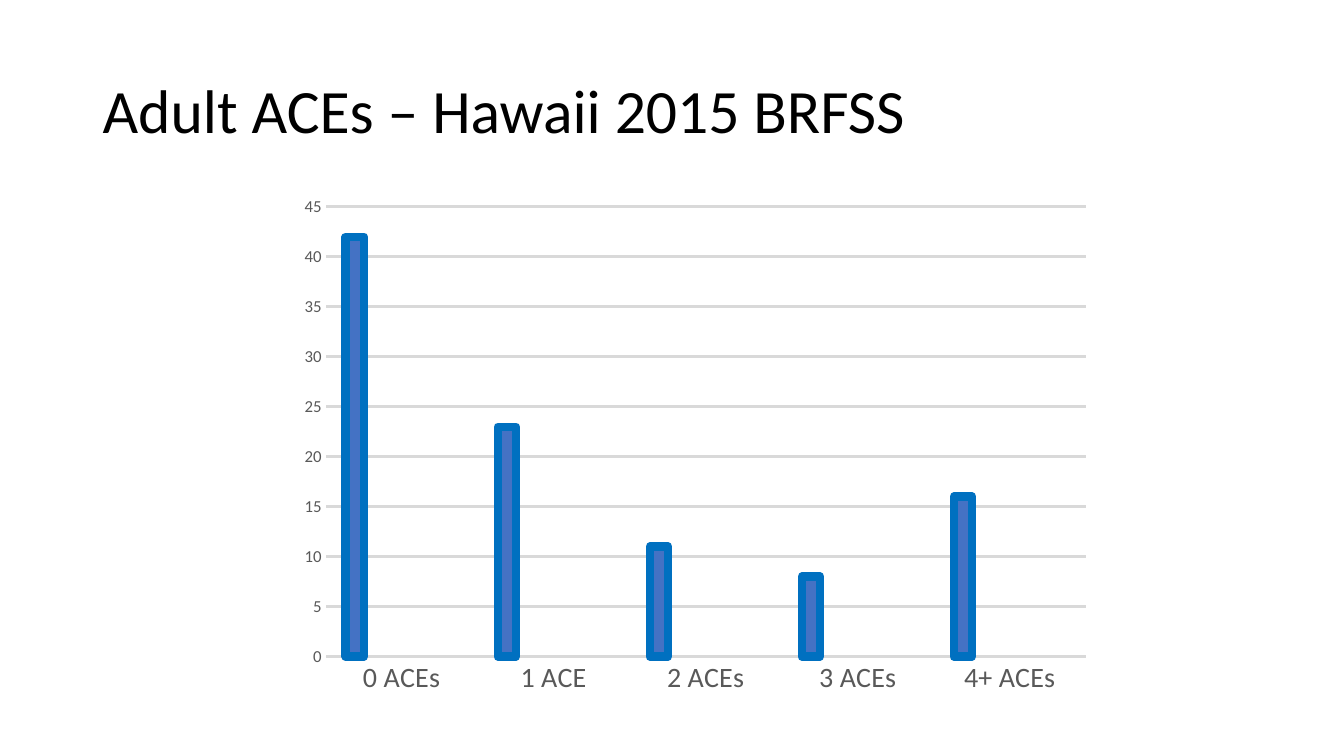
import pptx
import pptx.chart.data
import pptx.dml.color
import pptx.enum.chart
import pptx.enum.text
import pptx.util

WIDE, HIGH = 13.33, 7.5
BLACK, GREY, RULE, EDGE = "000000", "595959", "D9D9D9", "0070C0"
FILLS = ["4472C4", "ED7D31", "A5A5A5", "FFC000", "5B9BD5"]


def tint(code):
    return pptx.dml.color.RGBColor.from_string(code)


class Deck:
    """Holds the style and the current slide; places are shares of its size."""

    def __init__(self, face):
        self.face = face
        self.prs = pptx.Presentation()
        self.prs.slide_width = pptx.util.Inches(WIDE)
        self.prs.slide_height = pptx.util.Inches(HIGH)
        self.slide = self.prs.slides.add_slide(self.prs.slide_layouts[6])

    def place(self, left, top, width, height):
        return [pptx.util.Inches(share * side) for share, side in
                zip((left, top, width, height), (WIDE, HIGH, WIDE, HIGH))]

    def style(self, font, size, color):
        font.name = self.face
        font.size = pptx.util.Pt(size)
        font.color.rgb = tint(color)

    def stroke(self, line, color, width):
        line.color.rgb = tint(color)
        line.width = pptx.util.Pt(width)

    def title(self, text, area, size):
        frame = self.slide.shapes.add_textbox(*self.place(*area)).text_frame
        frame.word_wrap = True
        frame.vertical_anchor = pptx.enum.text.MSO_ANCHOR.MIDDLE
        frame.text = text
        line = frame.paragraphs[0]
        line.line_spacing = 0.9
        self.style(line.runs[0].font, size, BLACK)

    def bars(self, names, rows, area):
        data = pptx.chart.data.CategoryChartData()
        data.categories = names
        for label, vals in rows:
            data.add_series(label, vals)
        kind = pptx.enum.chart.XL_CHART_TYPE.COLUMN_CLUSTERED
        chart = self.slide.shapes.add_chart(kind, *self.place(*area), data).chart
        chart.has_title = False
        chart.has_legend = False
        self.style(chart.font, 10, BLACK)

        # Columns
        plot = chart.plots[0]
        plot.gap_width = 219
        plot.overlap = -27
        plot.vary_by_categories = False
        for row, color in zip(plot.series, FILLS):
            row.format.fill.solid()
            row.format.fill.fore_color.rgb = tint(color)
        self.stroke(plot.series[0].format.line, EDGE, 6)

        # Axes and grid
        none = pptx.enum.chart.XL_TICK_MARK.NONE
        for axis, size in ((chart.category_axis, 20), (chart.value_axis, 12)):
            axis.major_tick_mark = axis.minor_tick_mark = none
            self.style(axis.tick_labels.font, size, GREY)
        self.stroke(chart.category_axis.format.line, RULE, 0.75)
        scale = chart.value_axis
        scale.minimum_scale, scale.maximum_scale, scale.major_unit = 0, 45, 5
        scale.format.line.fill.background()
        scale.has_major_gridlines = True
        self.stroke(scale.major_gridlines.format.line, RULE, 2)


def main():
    deck = Deck("Calibri")

    # Heading
    deck.title("Adult ACEs – Hawaii 2015 BRFSS", (0.069, 0.053, 0.863, 0.193), 44)

    # Share of adults by number of ACEs; only the first series has values
    names = ["0 ACEs", "1 ACE", "2 ACEs", "3 ACEs", "4+ ACEs"]
    rows = [("Series 1", [42, 23, 11, 8, 16])]
    rows += [(f"Series {n}", [None] * len(names)) for n in range(2, 6)]
    deck.bars(names, rows, (0.2145, 0.2467, 0.6054, 0.6867))

    deck.prs.save("out.pptx")


if __name__ == "__main__":
    main()
